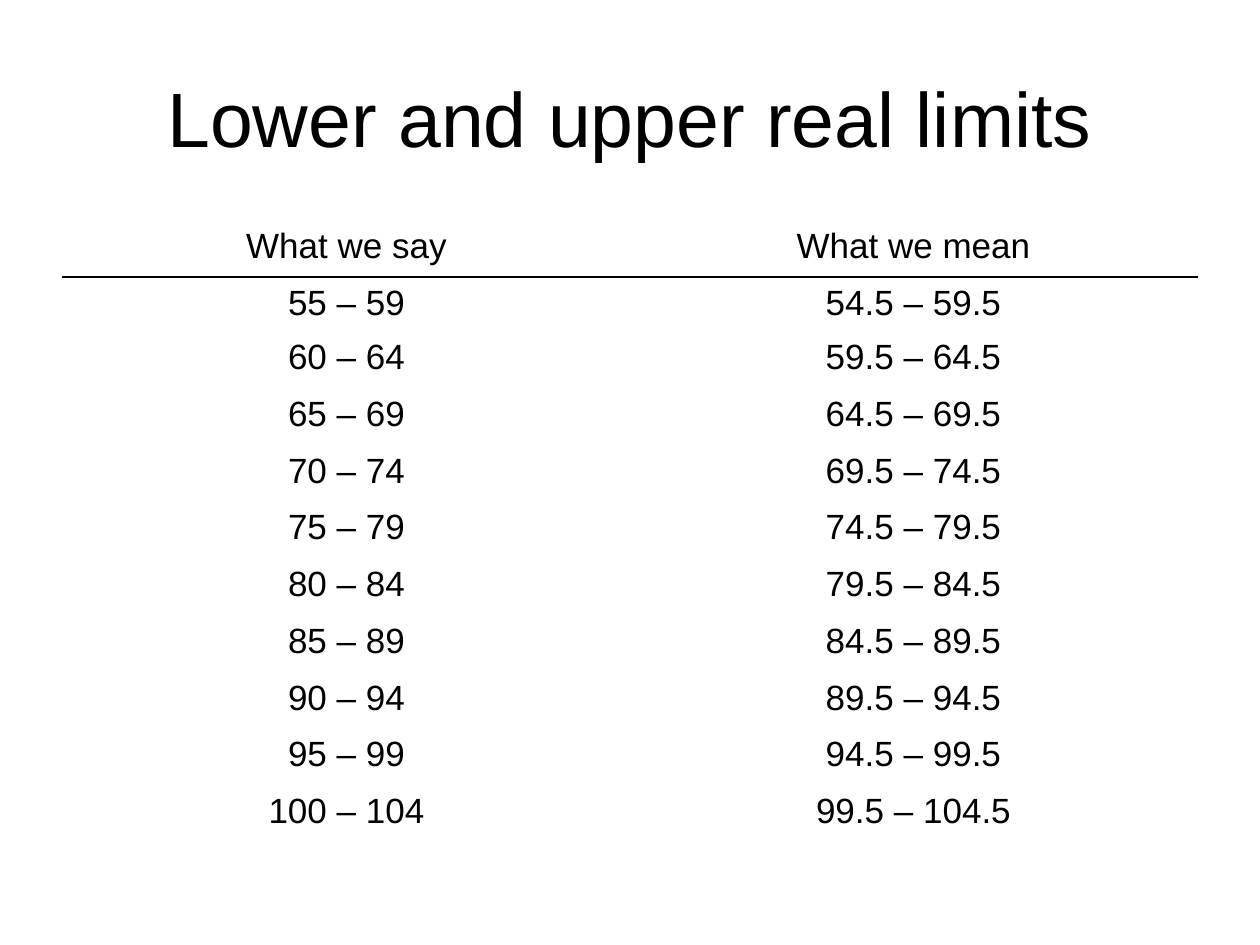
from dataclasses import dataclass

from lxml import etree
from pptx import Presentation
from pptx.dml.color import RGBColor
from pptx.enum.text import MSO_ANCHOR, PP_ALIGN
from pptx.oxml.ns import qn
from pptx.util import Inches, Pt

CENTER = PP_ALIGN.CENTER
MIDDLE = MSO_ANCHOR.MIDDLE


@dataclass(frozen=True)
class Theme:
    font: str = "Arial"
    ink: str = "000000"
    paper: str = "FFFFFF"
    title_size: int = 44
    table_size: int = 20
    rule_width: int = 1


THEME = Theme()
WIDTH, HEIGHT = 10, 7.5
MARGIN = WIDTH / 20
CONTENT_WIDTH = WIDTH - 2 * MARGIN
TITLE_BOX = (MARGIN, 0.3, CONTENT_WIDTH, 1.25)
TABLE_BOX = (MARGIN, 1.75, CONTENT_WIDTH, 4.88)
ROW_HEIGHT = 0.45
FIRST_INTERVAL_HEIGHT = 0.38

HEADINGS = ("What we say", "What we mean")
INTERVAL_WIDTH = 5
LOWER_LIMITS = range(55, 101, INTERVAL_WIDTH)


def limit_rows():
    """Pair each stated interval with its real limits, half a unit wider each way."""
    for lower in LOWER_LIMITS:
        upper = lower + INTERVAL_WIDTH - 1
        yield f"{lower} – {upper}", f"{lower - 0.5} – {upper + 0.5}"


def write_text(text_frame, text, size):
    paragraph = text_frame.paragraphs[0]
    paragraph.alignment = CENTER
    run = paragraph.add_run()
    run.text = text
    run.font.name = THEME.font
    run.font.size = Pt(size)
    run.font.color.rgb = RGBColor.from_string(THEME.ink)


def draw_rule(cell, edge):
    """Rule one cell edge: lnT for the top, lnB for the bottom."""
    properties = cell._tc.get_or_add_tcPr()
    line = etree.Element(qn(f"a:{edge}"), w=str(Pt(THEME.rule_width)))
    fill = etree.SubElement(line, qn("a:solidFill"))
    etree.SubElement(fill, qn("a:srgbClr"), val=THEME.ink)
    properties.insert(0, line)


def add_title(slide, box, text):
    shape = slide.shapes.add_textbox(*map(Inches, box))
    shape.text_frame.word_wrap = True
    shape.text_frame.vertical_anchor = MIDDLE
    write_text(shape.text_frame, text, THEME.title_size)


def add_limits_table(slide, box, rows):
    frame = slide.shapes.add_table(len(rows), len(HEADINGS), *map(Inches, box))
    table = frame.table
    table.first_row = False
    table.horz_banding = False
    for column in table.columns:
        column.width = Inches(box[2] / len(HEADINGS))
    for row_index, texts in enumerate(rows):
        height = FIRST_INTERVAL_HEIGHT if row_index == 1 else ROW_HEIGHT
        table.rows[row_index].height = Inches(height)
        for column_index, text in enumerate(texts):
            cell = table.cell(row_index, column_index)
            cell.fill.background()
            write_text(cell.text_frame, text, THEME.table_size)
            if row_index == 0:
                draw_rule(cell, "lnB")
            elif row_index == 1:
                draw_rule(cell, "lnT")


def main():
    presentation = Presentation()
    presentation.slide_width = Inches(WIDTH)
    presentation.slide_height = Inches(HEIGHT)
    slide = presentation.slides.add_slide(presentation.slide_layouts[6])
    background = slide.background.fill
    background.solid()
    background.fore_color.rgb = RGBColor.from_string(THEME.paper)
    add_title(slide, TITLE_BOX, "Lower and upper real limits")
    add_limits_table(slide, TABLE_BOX, [HEADINGS, *limit_rows()])
    presentation.save("out.pptx")


if __name__ == "__main__":
    main()
